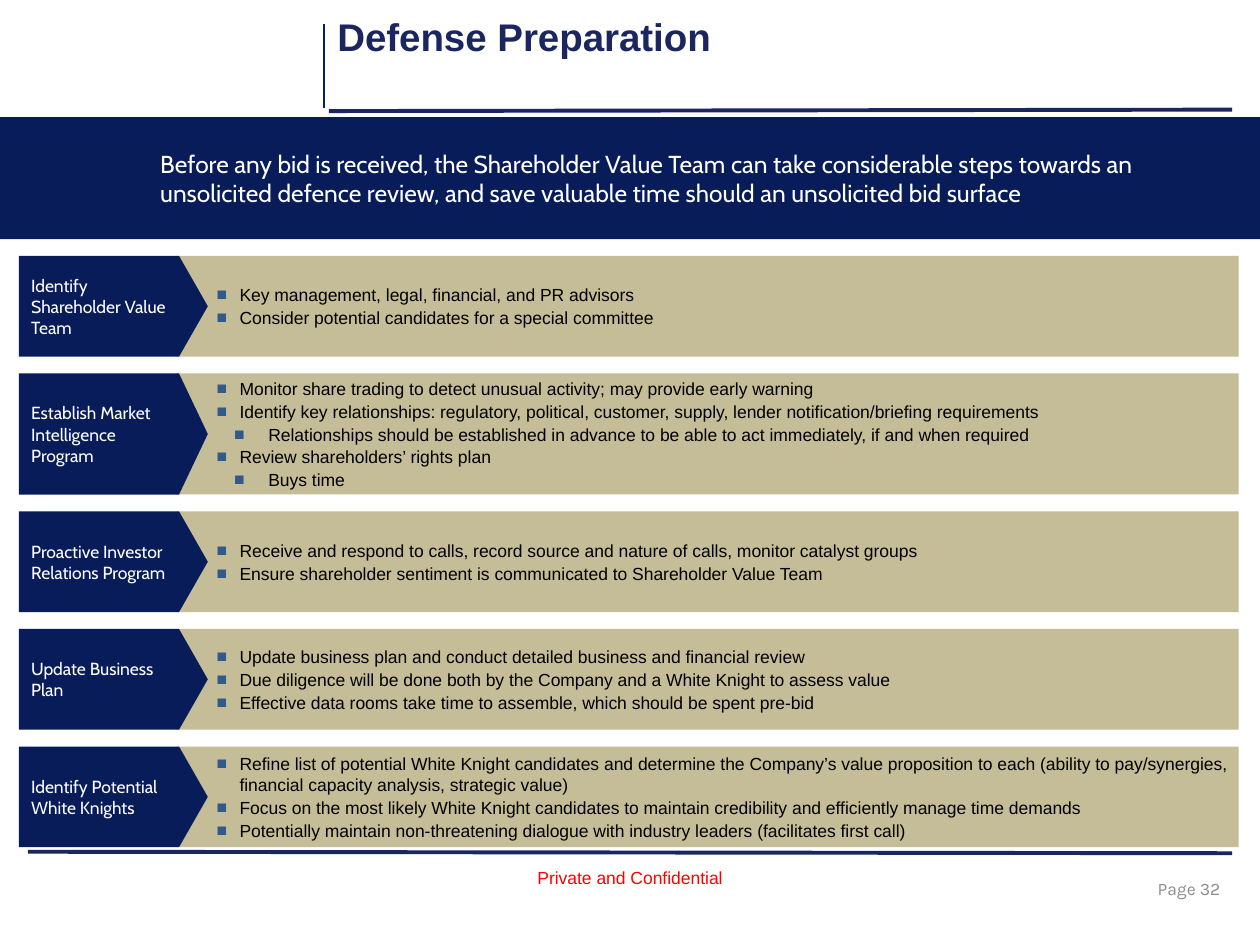
from lxml.etree import SubElement
from pptx import Presentation
from pptx.dml.color import RGBColor
from pptx.enum.shapes import MSO_CONNECTOR, MSO_SHAPE as Shape
from pptx.enum.text import MSO_ANCHOR as Anchor, MSO_AUTO_SIZE as Fit, PP_ALIGN as Align
from pptx.oxml.ns import qn
from pptx.util import Cm, Pt

NAVY = RGBColor(0x09, 0x1C, 0x5A)
INK = RGBColor(0x1B, 0x26, 0x5F)
RULE = RGBColor(0x00, 0x23, 0x68)
TAN = RGBColor(0xC4, 0xBD, 0x97)
BLUE = RGBColor(0x31, 0x59, 0x8A)
GREY = RGBColor(0x8C, 0x8C, 0x8C)
RED = RGBColor(0xFF, 0x00, 0x00)
BLACK = RGBColor(0x00, 0x00, 0x00)
WHITE = RGBColor(0xFF, 0xFF, 0xFF)

# Left margin and first-line indent in cm for each bullet level
INDENTS = [(1.27, -0.46), (1.85, -0.69)]

# Label, row height in cm, and bullets as (level, text)
STEPS = [
    ("Identify Shareholder Value Team", 2.03, [
        (0, "Key management, legal, financial, and PR advisors"),
        (0, "Consider potential candidates for a special committee")]),
    ("Establish Market Intelligence Program", 2.44, [
        (0, "Monitor share trading to detect unusual activity; may provide early warning"),
        (0, "Identify key relationships: regulatory, political, customer, supply, "
            "lender notification/briefing requirements"),
        (1, "Relationships should be established in advance to be able to act "
            "immediately, if and when required"),
        (0, "Review shareholders’ rights plan"),
        (1, "Buys time")]),
    ("Proactive Investor Relations Program", 2.03, [
        (0, "Receive and respond to calls, record source and nature of calls, "
            "monitor catalyst groups"),
        (0, "Ensure shareholder sentiment is communicated to Shareholder Value Team")]),
    ("Update Business Plan", 2.03, [
        (0, "Update business plan and conduct detailed business and financial review"),
        (0, "Due diligence will be done both by the Company and a White Knight to assess value"),
        (0, "Effective data rooms take time to assemble, which should be spent pre-bid")]),
    ("Identify Potential White Knights", 2.03, [
        (0, "Refine list of potential White Knight candidates and determine the Company’s "
            "value proposition to each (ability to pay/synergies, financial capacity "
            "analysis, strategic value)"),
        (0, "Focus on the most likely White Knight candidates to maintain credibility "
            "and efficiently manage time demands"),
        (0, "Potentially maintain non-threatening dialogue with industry leaders "
            "(facilitates first call)")]),
]


def add_bullet(para, level):
    left, first = INDENTS[level]
    props = para._p.get_or_add_pPr()
    props.set("marL", str(Cm(left)))
    props.set("indent", str(Cm(first)))
    color = SubElement(props, qn("a:buClr"))
    SubElement(color, qn("a:srgbClr"), val=str(BLUE))
    SubElement(props, qn("a:buFont"), typeface="Arial")
    SubElement(props, qn("a:buChar"), char="■")
    para.level = level


def put_text(shape, text, font="Arial", size=10, color=BLACK, bold=False,
             align=Align.LEFT, anchor=Anchor.MIDDLE, pad=(0.25, 0.13, 0.25, 0.13),
             wrap=True):
    """Fill a shape with one string, or with a list of (level, text) bullets."""
    frame = shape.text_frame
    frame.auto_size = Fit.NONE
    frame.word_wrap = wrap
    frame.vertical_anchor = anchor
    (frame.margin_left, frame.margin_top,
     frame.margin_right, frame.margin_bottom) = map(Cm, pad)
    items = [(None, text)] if isinstance(text, str) else text
    for i, (level, words) in enumerate(items):
        para = frame.add_paragraph() if i else frame.paragraphs[0]
        para.alignment = align
        if i:
            para.space_before = Pt(1)
        if level is not None:
            add_bullet(para, level)
        run = para.add_run()
        run.text = words
        run.font.name, run.font.size = font, Pt(size)
        run.font.bold = bold
        run.font.color.rgb = color


def add_block(slide, kind, box, fill):
    shape = slide.shapes.add_shape(kind, *map(Cm, box))
    shape.shadow.inherit = False
    shape.fill.solid()
    shape.fill.fore_color.rgb = fill
    shape.line.fill.background()
    return shape


def add_rule(slide, ends, color, width):
    line = slide.shapes.add_connector(MSO_CONNECTOR.STRAIGHT, *map(Cm, ends))
    line.line.color.rgb = color
    line.line.width = Pt(width)
    SubElement(line._element.spPr, qn("a:effectLst"))


def add_head(slide, x, y, w, h):
    """Title with a thin rule on its left and a thick one below."""
    title = slide.shapes.title
    title.left, title.top, title.width, title.height = map(Cm, (x, y, w, h))
    put_text(title, "Defense Preparation", size=22, color=INK, bold=True,
             anchor=Anchor.TOP)
    add_rule(slide, (x - 0.02, y + 0.35, x - 0.02, y + 2.05), RULE, 0.75)
    add_rule(slide, (x + 0.08, y + 2.11, x + w - 0.13, y + 2.08), INK, 2.25)


def add_banner(slide, x, y, w, h):
    block = add_block(slide, Shape.RECTANGLE, (x, y, w, h), NAVY)
    put_text(block, "Before any bid is received, the Shareholder Value Team can take "
             "considerable steps towards an unsolicited defence review, and save "
             "valuable time should an unsolicited bid surface",
             font="Cabin", size=14, color=WHITE, pad=(3.23, 0.18, 2.26, 0.18))


def add_step(slide, x, y, w, h, label, points):
    """One row: bullets on a bar, with an arrow label over its left end."""
    bar = add_block(slide, Shape.RECTANGLE, (x + 3.18, y, w - 3.18, h), TAN)
    put_text(bar, points, pad=(0, 0.18, 0, 0.18))
    arrow = add_block(slide, Shape.RIGHT_ARROW_CALLOUT, (x, y, 3.81, h), NAVY)
    for i, value in enumerate((1, 0.5, 0.58 / h, 0.83)):
        arrow.adjustments[i] = value
    put_text(arrow, label, font="Cabin", color=WHITE, pad=(0.25, 0.13, 0.13, 0.13))


def add_steps(slide, x, y, w, gap):
    for label, height, points in STEPS:
        add_step(slide, x, y, w, height, label, points)
        y += height + gap


def add_foot(slide, x, y, w):
    add_rule(slide, (x, y, x + w, y + 0.03), INK, 2.25)
    note = slide.shapes.add_textbox(Cm(x + 10), Cm(y + 0.18), Cm(4.28), Cm(0.69))
    put_text(note, "Private and Confidential", color=RED, align=Align.CENTER, wrap=False)
    page = slide.shapes.add_textbox(Cm(x + w - 5.82), Cm(y + 0.23), Cm(5.92), Cm(1.02))
    put_text(page, "Page 32", font="Karla", color=GREY, align=Align.RIGHT,
             pad=(0.25, 0.13, 0.34, 0.13))


def main():
    deck = Presentation()
    deck.slide_width, deck.slide_height = Cm(25.4), Cm(19.05)
    slide = deck.slides.add_slide(deck.slide_layouts[5])
    add_head(slide, 6.55, 0.13, 18.42, 1.9)
    add_foot(slide, 0.56, 17.17, 24.28)
    add_banner(slide, 0, 2.36, 25.4, 2.46)
    add_steps(slide, 0.38, 5.16, 24.59, 0.34)
    deck.save("out.pptx")


if __name__ == "__main__":
    main()
